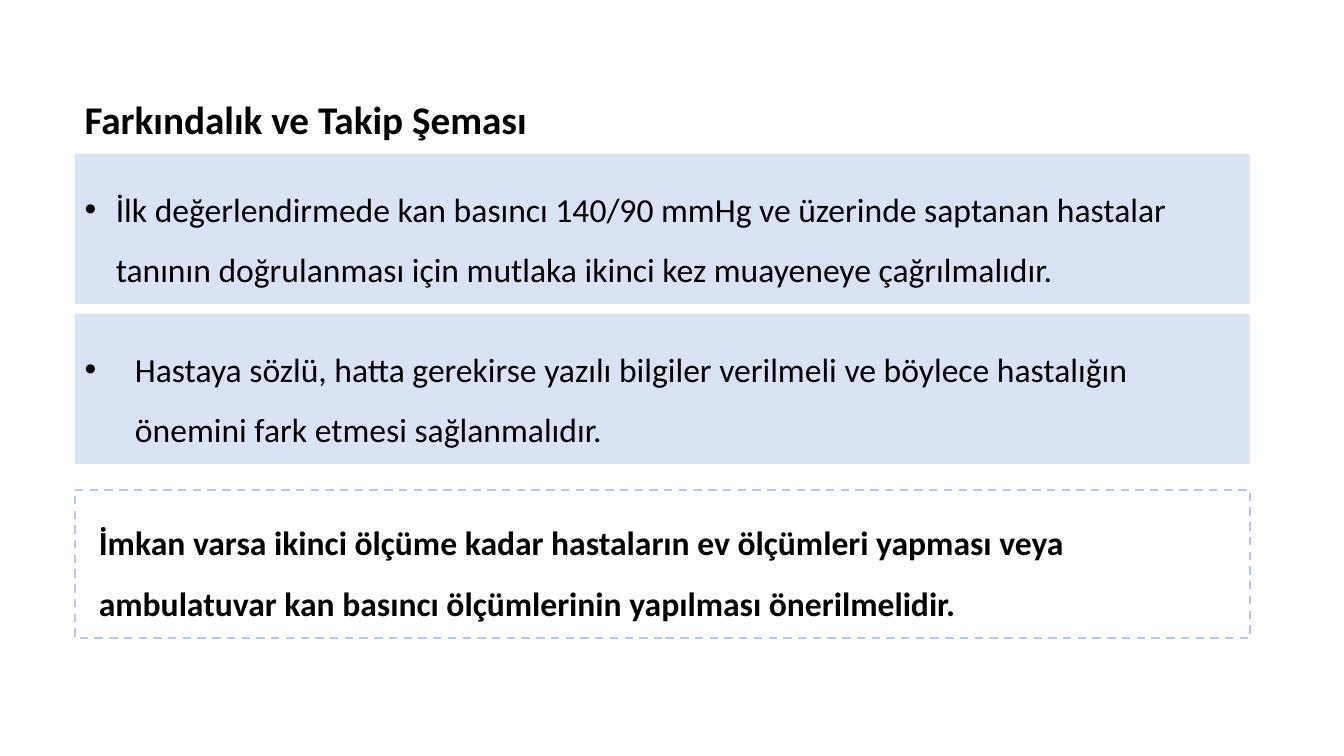
from dataclasses import dataclass

import pptx
import pptx.dml.color
import pptx.enum.dml
import pptx.enum.shapes
import pptx.enum.text
import pptx.oxml
import pptx.oxml.ns
import pptx.util

EMU_PER_PX = 9144  # 100 px to the inch
LEFT = 74
PANEL_WIDTH = 1166
FONT = "Calibri"
BLACK = "000000"


@dataclass(frozen=True)
class Panel:
    text: str
    top: int
    height: int
    line_color: str
    line_points: float
    fill: str = ""
    dashed: bool = False
    bold: bool = False
    bullet_indent: int = 0
    margins: tuple[int, int, int, int] = (10, 5, 10, 5)
    anchor: pptx.enum.text.MSO_ANCHOR = pptx.enum.text.MSO_ANCHOR.MIDDLE


PANELS = [
    Panel(
        "İlk değerlendirmede kan basıncı 140/90 mmHg ve üzerinde saptanan hastalar "
        "tanının doğrulanması için mutlaka ikinci kez muayeneye çağrılmalıdır.",
        top=152, height=150, line_color="FFFFFF", line_points=0.5,
        fill="DAE3F3", bullet_indent=31,
    ),
    Panel(
        "Hastaya sözlü, hatta gerekirse yazılı bilgiler verilmeli ve böylece hastalığın "
        "önemini fark etmesi sağlanmalıdır.",
        top=311, height=150, line_color="FFFFFF", line_points=0.5,
        fill="DAE3F3", bullet_indent=50,
    ),
    Panel(
        "İmkan varsa ikinci ölçüme kadar hastaların ev ölçümleri yapması veya "
        "ambulatuvar kan basıncı ölçümlerinin yapılması önerilmelidir.",
        top=486, height=147, line_color="B4C7E7", line_points=1.5,
        dashed=True, bold=True, margins=(24, 12, 10, 20),
        anchor=pptx.enum.text.MSO_ANCHOR.TOP,
    ),
]


def px(length: int) -> pptx.util.Emu:
    return pptx.util.Emu(length * EMU_PER_PX)


def rgb(color: str) -> pptx.dml.color.RGBColor:
    return pptx.dml.color.RGBColor.from_string(color)


def write_text(text_frame, text: str, size: int, bold: bool):
    """Fill the frame with one left-aligned paragraph and return it."""
    text_frame.text = text
    text_frame.word_wrap = True
    paragraph = text_frame.paragraphs[0]
    paragraph.alignment = pptx.enum.text.PP_ALIGN.LEFT
    paragraph.line_spacing = 1.5
    for run in paragraph.runs:
        run.font.name = FONT
        run.font.size = pptx.util.Pt(size)
        run.font.bold = bold
        run.font.color.rgb = rgb(BLACK)
    return paragraph


def add_bullet(paragraph, indent: int) -> None:
    properties = paragraph._p.get_or_add_pPr()
    properties.set("marL", str(px(indent)))
    properties.set("indent", str(-px(indent)))
    namespace = pptx.oxml.ns.nsdecls("a")
    for element in ('buFont %s typeface="Arial"', 'buChar %s char="•"'):
        properties.append(pptx.oxml.parse_xml(f"<a:{element % namespace}/>"))


def add_title(slide) -> None:
    title = slide.shapes.add_textbox(px(LEFT), px(66), px(1000), px(57))
    paragraph = write_text(title.text_frame, "Farkındalık ve Takip Şeması", 28, True)
    paragraph.space_after = pptx.util.Pt(10)
    title.text_frame.auto_size = pptx.enum.text.MSO_AUTO_SIZE.SHAPE_TO_FIT_TEXT


def add_panel(slide, panel: Panel) -> None:
    shape = slide.shapes.add_shape(
        pptx.enum.shapes.MSO_SHAPE.RECTANGLE,
        px(LEFT), px(panel.top), px(PANEL_WIDTH), px(panel.height),
    )
    shape.shadow.inherit = False

    # Fill and border
    if panel.fill:
        shape.fill.solid()
        shape.fill.fore_color.rgb = rgb(panel.fill)
    else:
        shape.fill.background()
    shape.line.color.rgb = rgb(panel.line_color)
    shape.line.width = pptx.util.Pt(panel.line_points)
    if panel.dashed:
        shape.line.dash_style = pptx.enum.dml.MSO_LINE.DASH

    # Text
    text_frame = shape.text_frame
    left, top, right, bottom = panel.margins
    text_frame.margin_left, text_frame.margin_top = px(left), px(top)
    text_frame.margin_right, text_frame.margin_bottom = px(right), px(bottom)
    text_frame.vertical_anchor = panel.anchor
    paragraph = write_text(text_frame, panel.text, 24, panel.bold)
    if panel.bullet_indent:
        add_bullet(paragraph, panel.bullet_indent)


def main() -> None:
    presentation = pptx.Presentation()
    presentation.slide_width = px(1333)
    presentation.slide_height = px(750)
    slide = presentation.slides.add_slide(presentation.slide_layouts[6])
    add_title(slide)
    for panel in PANELS:
        add_panel(slide, panel)
    presentation.save("out.pptx")


if __name__ == "__main__":
    main()
